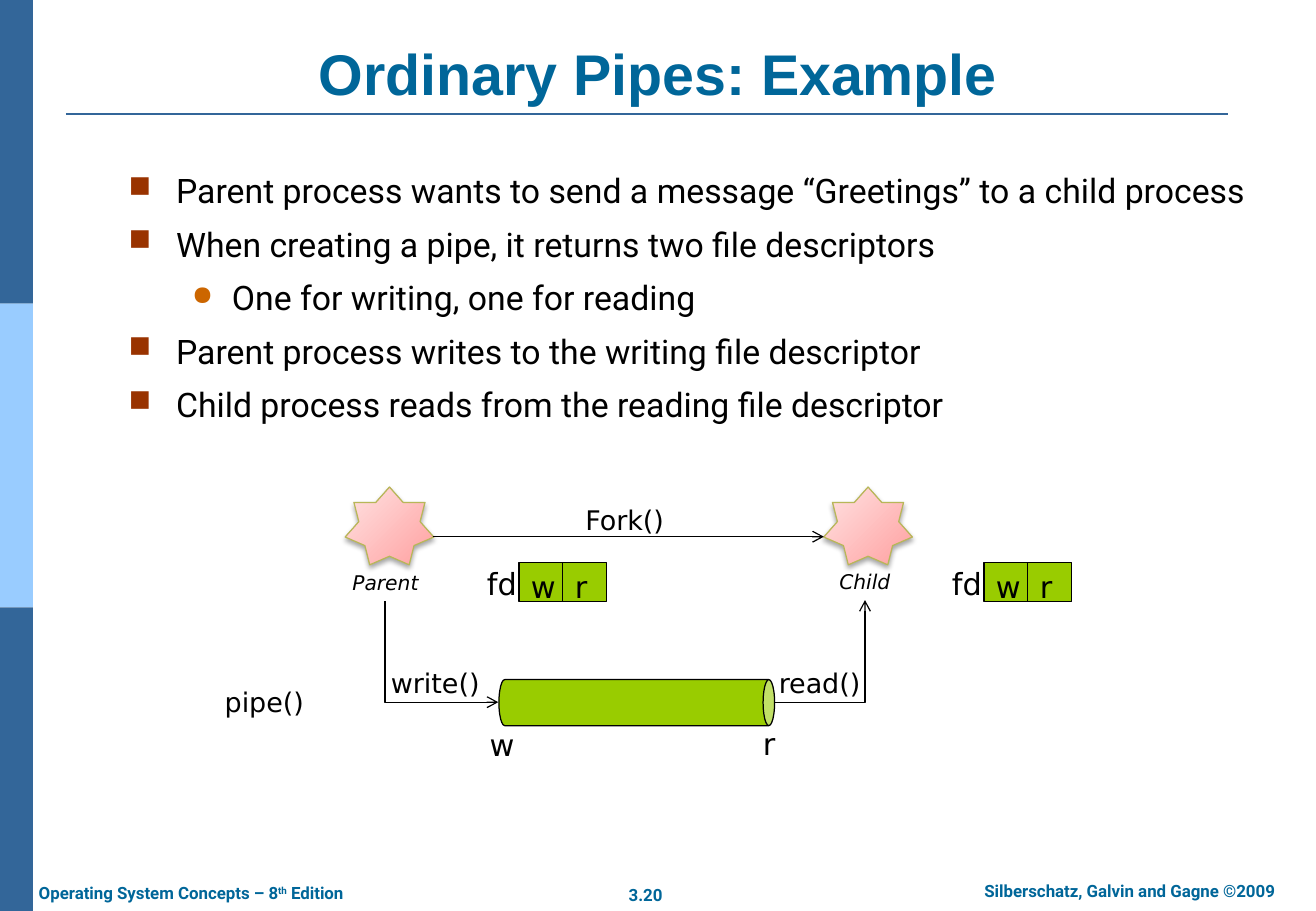
from lxml.etree import SubElement
from pptx import Presentation
from pptx.dml.color import RGBColor
from pptx.enum.shapes import MSO_CONNECTOR as CONNECTOR, MSO_SHAPE as SHAPE
from pptx.enum.text import MSO_ANCHOR as ANCHOR, PP_ALIGN as ALIGN
from pptx.oxml.ns import qn
from pptx.util import Inches, Pt

WIDTH, HEIGHT = Inches(10.83), Inches(7.5)
COLUMNS, ROWS = 30, 24
NAVY, SKY, TEAL, BLACK, GREEN = "336699", "99CCFF", "006699", "000000", "99CC00"
DIAGRAM_FONT = "DejaVu Sans"
BULLETS = [
    (0, "Parent process wants to send a message “Greetings” to a child process"),
    (0, "When creating a pipe, it returns two file descriptors"),
    (1, "One for writing, one for reading"),
    (0, "Parent process writes to the writing file descriptor"),
    (0, "Child process reads from the reading file descriptor"),
]
# Per level: character, colour, size in percent, left margin, hanging indent
BULLET_STYLES = [("■", "993300", 90, 0.39, 0.39), ("●", "CC6600", 80, 0.85, 0.33)]


def rgb(color):
    return RGBColor.from_string(color)


def across(columns):
    return round(WIDTH * columns / COLUMNS)


def down(rows):
    return round(HEIGHT * rows / ROWS)


def grid_box(left, top, width, height):
    return across(left), down(top), across(width), down(height)


def style_text(paragraph, size, font=DIAGRAM_FONT, color=BLACK, bold=False, italic=False):
    for run in paragraph.runs:
        run.font.name, run.font.size = font, Pt(size)
        run.font.bold, run.font.italic = bold, italic
        run.font.color.rgb = rgb(color)


def add_text(shapes, box, text, size, align=ALIGN.LEFT, wrap=False, **style):
    text_frame = shapes.add_textbox(*grid_box(*box)).text_frame
    text_frame.word_wrap = wrap
    text_frame.text = text
    paragraph = text_frame.paragraphs[0]
    paragraph.alignment = align
    style_text(paragraph, size, **style)
    return text_frame


def add_shape(shapes, kind, box, fill=None, line=None):
    shape = shapes.add_shape(kind, *grid_box(*box))
    shape.shadow.inherit = False
    if fill:
        shape.fill.solid()
        shape.fill.fore_color.rgb = rgb(fill)
    if line:
        shape.line.color.rgb = rgb(line)
        shape.line.width = Pt(0.75)
    else:
        shape.line.fill.background()
    return shape


def add_line(shapes, start, end, color=BLACK, width=0.75, kind=CONNECTOR.STRAIGHT, arrow=None):
    """Draw a connector; arrow is headEnd (at start), tailEnd (at end) or None."""
    connector = shapes.add_connector(
        kind, across(start[0]), down(start[1]), across(end[0]), down(end[1]))
    connector.line.color.rgb = rgb(color)
    connector.line.width = Pt(width)
    properties = connector._element.spPr
    if kind == CONNECTOR.ELBOW:
        properties.find(qn("a:prstGeom")).set("prst", "bentConnector2")
    if arrow:
        SubElement(properties.find(qn("a:ln")), qn(f"a:{arrow}"), type="arrow")
    SubElement(properties, qn("a:effectLst"))


def add_process(shapes, left):
    star = add_shape(shapes, SHAPE.STAR_7_POINT, (left, 12.83, 2.02, 2.05), line="B7B758")
    star.fill.gradient()
    star.fill.gradient_angle = 135
    for stop, color in zip(star.fill.gradient_stops, ("FFA0A0", "FFE3E3")):
        stop.color.rgb = rgb(color)
    effects = star._element.spPr.find(qn("a:effectLst"))
    shadow = SubElement(effects, qn("a:outerShdw"), blurRad=str(Pt(3.1)), dist=str(Pt(1.8)),
                        dir="5400000", rotWithShape="0")
    shade = SubElement(shadow, qn("a:srgbClr"), val=BLACK)
    SubElement(shade, qn("a:alpha"), val="35000")


def add_descriptors(slide, left):
    """Add the fd label with its write and read cells."""
    shapes = slide.shapes.add_group_shape().shapes
    for index, name in enumerate("wr"):
        cell = add_shape(shapes, SHAPE.RECTANGLE, (left + 1 + index, 14.82, 1, 1.03), GREEN, BLACK)
        text_frame = cell.text_frame
        text_frame.word_wrap = False
        text_frame.vertical_anchor = ANCHOR.TOP
        text_frame.text = name
        text_frame.paragraphs[0].alignment = ALIGN.LEFT
        style_text(text_frame.paragraphs[0], 18)
    add_text(shapes, (left, 14.72, 1.25, 1.28), "fd", 18)


def add_bullet(paragraph, level):
    character, color, percent, margin, hanging = BULLET_STYLES[level]
    paragraph.level = level
    properties = paragraph._p.get_or_add_pPr()
    properties.set("marL", str(Inches(margin)))
    properties.set("indent", str(-Inches(hanging)))
    bullet_color = SubElement(properties, qn("a:buClr"))
    SubElement(bullet_color, qn("a:srgbClr"), val=color)
    SubElement(properties, qn("a:buSzPct"), val=str(percent * 1000))
    SubElement(properties, qn("a:buChar"), char=character)


def add_body(shapes):
    text_frame = shapes.add_textbox(*grid_box(2.66, 4.32, 27, 7.9)).text_frame
    text_frame.word_wrap = True
    text_frame.text = "\n".join(text for _, text in BULLETS)
    for index, (level, _) in enumerate(BULLETS):
        paragraph = text_frame.paragraphs[index]
        add_bullet(paragraph, level)
        paragraph.space_before = Pt(7.7 if index else 0)
        style_text(paragraph, 20, font="Roboto")


def add_frame(shapes):
    """Add the side bands, title, rule and footer."""
    for index, color in enumerate((NAVY, SKY, NAVY)):
        add_shape(shapes, SHAPE.RECTANGLE, (0, 8 * index, 0.75, 8), color)
    add_line(shapes, (1.5, 3), (28, 3), NAVY, 1.5)
    title = add_text(shapes, (1.5, 0.96, 27, 2.02), "Ordinary Pipes: Example", 34,
                     ALIGN.CENTER, True, font="Arial", color=TEAL, bold=True)
    title.vertical_anchor = ANCHOR.BOTTOM

    footer = {"font": "Roboto", "color": TEAL, "bold": True}
    add_text(shapes, (14.02, 23.14, 1.39, 0.9), "3.20", 10, ALIGN.CENTER, **footer)
    add_text(shapes, (21.3, 23.04, 8.9, 0.9), "Silberschatz, Galvin and Gagne ©2009", 10,
             ALIGN.CENTER, True, **footer)
    book = add_text(shapes, (0.61, 23.1, 8.06, 0.9), "Operating System Concepts – 8", 10, **footer)
    paragraph = book.paragraphs[0]
    ordinal, edition = paragraph.add_run(), paragraph.add_run()
    ordinal.text, edition.text = "th", " Edition"
    style_text(paragraph, 10, **footer)
    ordinal._r.get_or_add_rPr().set("baseline", "30000")


def add_diagram(slide):
    shapes = slide.shapes
    for left in (7.87, 18.78):
        add_process(shapes, left)
    add_text(shapes, (7.76, 14.88, 2.08, 0.96), "Parent", 12, italic=True)
    add_text(shapes, (18.86, 14.85, 1.72, 0.96), "Child", 12, italic=True)
    for left in (10.83, 21.43):
        add_descriptors(slide, left)

    pipe = add_shape(shapes, SHAPE.CAN, (13.99, 14.88, 1.05, 7.26), GREEN, BLACK)
    pipe.rotation = 90
    add_line(shapes, (9.86, 14.14), (18.78, 14.14), arrow="tailEnd")
    add_line(shapes, (11.36, 18.5), (8.78, 15.84), kind=CONNECTOR.ELBOW, arrow="headEnd")
    add_line(shapes, (17.65, 18.5), (19.72, 15.81), kind=CONNECTOR.ELBOW, arrow="tailEnd")

    for left, top, width, text, size in (
        (10.89, 18.98, 1.14, "w", 18),
        (17.12, 18.94, 0.86, "r", 18),
        (4.85, 17.89, 2.44, "pipe()", 16),
        (13.07, 13.12, 2.49, "Fork()", 16),
        (8.64, 17.41, 2.77, "write()", 16),
        (17.48, 17.41, 2.52, "read()", 16),
    ):
        add_text(shapes, (left, top, width, 1.2), text, size)


def main():
    presentation = Presentation()
    presentation.slide_width, presentation.slide_height = WIDTH, HEIGHT
    slide = presentation.slides.add_slide(presentation.slide_layouts[6])
    add_frame(slide.shapes)
    add_body(slide.shapes)
    add_diagram(slide)
    presentation.save("out.pptx")


if __name__ == "__main__":
    main()
